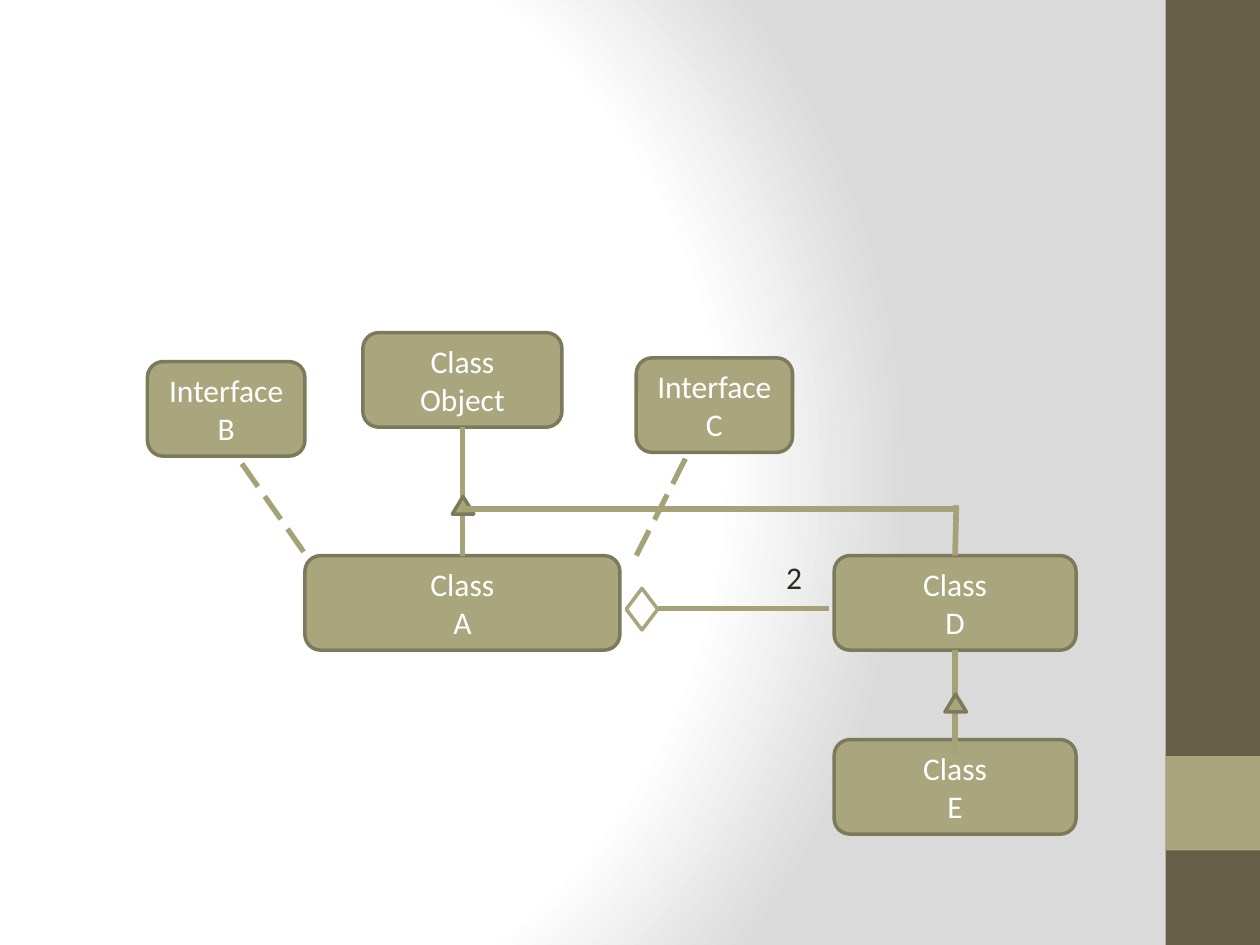
from dataclasses import dataclass

from pptx import Presentation
from pptx.dml.color import RGBColor
from pptx.enum.shapes import MSO_CONNECTOR, MSO_SHAPE
from pptx.enum.text import MSO_ANCHOR, PP_ALIGN
from pptx.oxml import parse_xml
from pptx.oxml.ns import nsdecls, qn
from pptx.oxml.xmlchemy import OxmlElement
from pptx.util import Pt

PX = 9144  # 100 px to the inch
BLANK_LAYOUT = 6


@dataclass(frozen=True)
class Theme:
    font: str = "Calibri"
    text_size: int = 18
    border_width: float = 2
    link_width: float = 3.25
    dash_width: float = 3
    olive: str = "A9A57C"
    olive_border: str = "7D7A5C"
    link: str = "A6A278"
    band: str = "675E47"
    text: str = "2F2B20"
    white: str = "FFFFFF"
    gray: str = "DADADA"


THEME = Theme()


def px(*lengths):
    return [round(length * PX) for length in lengths]


def set_background(slide):
    """Fill the slide with a circular white-to-gray gradient."""
    slide.background.fill.solid()
    properties = slide.element.find(".//" + qn("p:bgPr"))
    stops = "".join(
        f'<a:gs pos="{percent * 1000}"><a:srgbClr val="{color}"/></a:gs>'
        for percent, color in ((0, THEME.white), (75, THEME.white), (100, THEME.gray))
    )
    gradient = parse_xml(
        f'<a:gradFill rotWithShape="1" {nsdecls("a")}><a:gsLst>{stops}</a:gsLst>'
        '<a:path path="circle">'
        '<a:fillToRect l="20000" t="50000" r="100000" b="50000"/>'
        "</a:path></a:gradFill>"
    )
    properties.replace(properties[0], gradient)


def add_filled_shape(slide, kind, box, fill, border=None):
    shape = slide.shapes.add_shape(kind, *px(*box))
    shape.shadow.inherit = False
    shape.fill.solid()
    shape.fill.fore_color.rgb = RGBColor.from_string(fill)
    if border:
        shape.line.color.rgb = RGBColor.from_string(border)
        shape.line.width = Pt(THEME.border_width)
    else:
        shape.line.fill.background()
    return shape


def format_paragraph(paragraph, color, alignment):
    paragraph.alignment = alignment
    paragraph.font.name = THEME.font
    paragraph.font.size = Pt(THEME.text_size)
    paragraph.font.color.rgb = RGBColor.from_string(color)


def add_side_band(slide, left, top, width, height):
    add_filled_shape(slide, MSO_SHAPE.RECTANGLE, (left, top, width, height), THEME.band)
    accent = (left, top + height * 4 // 5, width, width)
    add_filled_shape(slide, MSO_SHAPE.RECTANGLE, accent, THEME.olive)


def add_type_box(slide, kind, name, box):
    shape = add_filled_shape(
        slide, MSO_SHAPE.ROUNDED_RECTANGLE, box, THEME.olive, THEME.olive_border
    )
    frame = shape.text_frame
    frame.word_wrap = True
    frame.vertical_anchor = MSO_ANCHOR.MIDDLE
    frame.text = f"{kind}\n{name}"
    for paragraph in frame.paragraphs:
        format_paragraph(paragraph, THEME.white, PP_ALIGN.CENTER)


def add_link(slide, start, end, width=THEME.link_width):
    link = slide.shapes.add_connector(MSO_CONNECTOR.STRAIGHT, *px(*start, *end))
    link.line.color.rgb = RGBColor.from_string(THEME.link)
    link.line.width = Pt(width)
    link.element.spPr.append(OxmlElement("a:effectLst"))


def add_dashed_link(slide, start, end, dash=0.26, count=3):
    """Draw evenly spaced dashes, each a given share of the whole length."""

    def point(share):
        return [a + (b - a) * share for a, b in zip(start, end)]

    step = (1 - dash) / (count - 1)
    for index in range(count):
        first = index * step
        add_link(slide, point(first), point(first + dash), THEME.dash_width)


def add_inheritance(slide, x, child_y, parent_y, triangle_y):
    add_link(slide, (x, child_y), (x, parent_y))
    add_filled_shape(
        slide, MSO_SHAPE.ISOSCELES_TRIANGLE, (x - 8, triangle_y, 17, 14),
        THEME.olive, THEME.olive_border,
    )


def add_aggregation(slide, left, middle, right, count):
    """Link from a diamond at the left to a part, with its count above."""
    width, height = 25, 33
    add_link(slide, (left + width, middle), (right, middle))
    add_filled_shape(
        slide, MSO_SHAPE.DIAMOND, (left, middle - height // 2, width, height),
        THEME.white, THEME.olive,
    )
    label = slide.shapes.add_textbox(*px(right - 44, middle - 45, 30, 40))
    label.text_frame.text = count
    format_paragraph(label.text_frame.paragraphs[0], THEME.text, PP_ALIGN.LEFT)


def add_class_diagram(slide, left, top):
    height = 75
    class_top, lower_top = top + 177, top + 323
    boxes = (
        ("Class", "A", left + 125, class_top, 250),
        ("Class", "D", left + 545, class_top, 192),
        ("Interface", "B", left, top + 23, 125),
        ("Interface", "C", left + 388, top + 20, 124),
        ("Class", "Object", left + 171, top, 158),
        ("Class", "E", left + 545, lower_top, 192),
    )
    for kind, name, x, y, width in boxes:
        add_type_box(slide, kind, name, (x, y, width, height))

    a_center, d_center = left + 250, left + 641
    branch_y = top + 140
    add_inheritance(slide, a_center, class_top, top + height, top + 130)
    add_inheritance(slide, d_center, lower_top + 12, class_top + height, top + 287)
    add_link(slide, (d_center, class_top), (d_center + 1, branch_y - 3))
    add_link(slide, (d_center, branch_y), (a_center, branch_y))

    add_dashed_link(slide, (left + 124, top + 174), (left + 75, top + 104))
    add_dashed_link(slide, (left + 388, class_top), (left + 427, top + 100))
    add_aggregation(slide, left + 380, top + 219, left + 541, "2")


def main():
    presentation = Presentation()
    presentation.slide_width, presentation.slide_height = px(1000, 750)
    slide = presentation.slides.add_slide(presentation.slide_layouts[BLANK_LAYOUT])
    set_background(slide)
    add_side_band(slide, 925, 0, 75, 750)
    add_class_diagram(slide, 117, 264)
    presentation.save("out.pptx")


if __name__ == "__main__":
    main()
